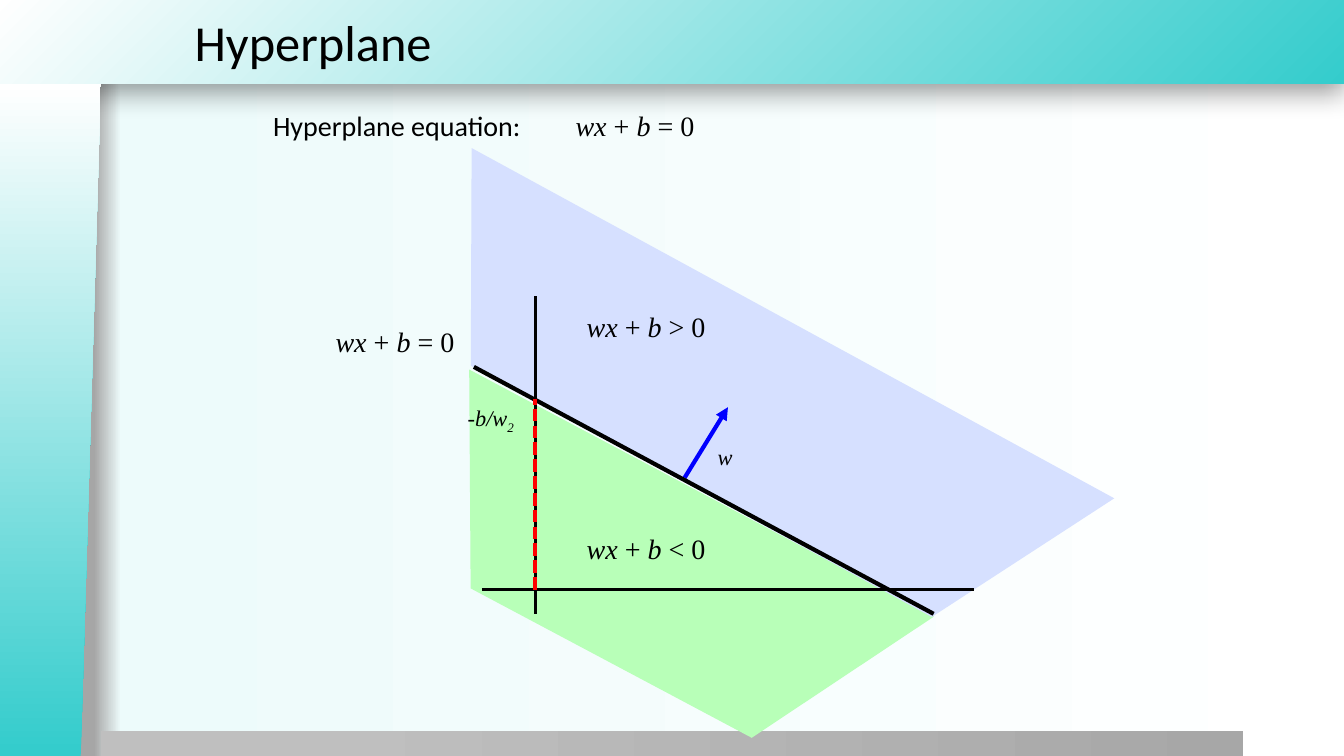
from lxml import etree
from pptx import Presentation
from pptx.dml.color import RGBColor
from pptx.enum.dml import MSO_LINE
from pptx.enum.shapes import MSO_CONNECTOR, MSO_SHAPE
from pptx.enum.text import MSO_ANCHOR, PP_ALIGN
from pptx.oxml.ns import qn
from pptx.util import Inches, Pt

RECT = MSO_SHAPE.RECTANGLE
SLANT = MSO_SHAPE.FLOWCHART_MANUAL_INPUT
TRAP = MSO_SHAPE.TRAPEZOID
STRAIGHT = MSO_CONNECTOR.STRAIGHT
DASH = MSO_LINE.SQUARE_DOT
LEFT = PP_ALIGN.LEFT
TOP, MIDDLE = MSO_ANCHOR.TOP, MSO_ANCHOR.MIDDLE
SANS, SERIF = "Calibri", "Times New Roman"
BLACK, BLUE, RED = "000000", "0000FF", "FF0000"
TEAL, WHITE = "34CCCC", "FFFFFF"


def color(code):
    """Turn a hex string into a colour."""
    return RGBColor.from_string(code)


def node(parent, tag, **attrs):
    """Add a drawing element to a parent."""
    item = etree.SubElement(parent, qn("a:" + tag))
    for key, value in attrs.items():
        item.set(key, str(value))
    return item


def blend(fill, grad, stops, focus=False):
    """Give a fill gradient stops, level or from the lower right corner."""
    fill.gradient()
    fill.gradient_angle = 0
    for old in list(grad()):
        grad().remove(old)
    steps = node(grad(), "gsLst")
    for place, code in stops:
        node(node(steps, "gs", pos=place * 1000), "srgbClr", val=code)
    if focus:
        way = node(grad(), "path", path="circle")
        node(way, "fillToRect", l=100000, t=100000)
    else:
        node(grad(), "lin", ang=0, scaled=0)


def write(frame, runs, font=SERIF, size=20, anchor=TOP):
    """Write (text, format) runs into a frame."""
    frame.word_wrap = True
    frame.vertical_anchor = anchor
    para = frame.paragraphs[0]
    para.alignment = LEFT
    for words, form in runs:
        run = para.add_run()
        run.text = words
        run.font.name = form.get("font", font)
        run.font.size = Pt(size)
        run.font.italic = form.get("slope", False)
        run.font.color.rgb = color(BLACK)
        if "base" in form:
            run.font._element.set("baseline", str(form["base"] * 1000))
    return para


def rule(sign):
    """List the runs of the plane formula with a sign."""
    slope = {"slope": True}
    return [("wx", slope), (" + ", {}), ("b", slope), (f" {sign} 0", {})]


class Board:
    """Holds the style and the current slide."""

    def __init__(self, deck):
        """Add a title-only slide with its backdrop."""
        self.slide = deck.slides.add_slide(deck.slide_layouts[5])
        self.shapes = self.slide.shapes
        fill = self.slide.background.fill
        blend(fill, lambda: next(self.slide._element.iter(qn("a:gradFill"))),
              [(7, "A6A6A6"), (9, "EDFBFB"), (100, WHITE)])

    def form(self, kind, box, fill, turn=0, flip=False, adj=None, focus=False):
        """Draw a preset shape with a plain or blended fill."""
        item = self.shapes.add_shape(kind, *map(Inches, box))
        item.shadow.inherit = False
        item.line.fill.background()
        item.rotation = turn
        if adj is not None:
            item.adjustments[0] = adj
        if flip:
            item._element.spPr.find(qn("a:xfrm")).set("flipV", "1")
        if isinstance(fill, str):
            item.fill.solid()
            item.fill.fore_color.rgb = color(fill)
        else:
            blend(item.fill, lambda: item._element.spPr.find(qn("a:gradFill")),
                  fill, focus)
        return item

    def shade(self, item):
        """Cast a soft shadow below a shape."""
        effect = item._element.spPr.find(qn("a:effectLst"))
        cast = node(effect, "outerShdw", blurRad=Pt(20), dist=Pt(6),
                    dir=5400000, algn="t", rotWithShape=0)
        node(node(cast, "srgbClr", val=BLACK), "alpha", val=40000)

    def title(self, words, box):
        """Place and format the title."""
        item = self.shapes.title
        self.shapes._spTree.append(item._element)
        item.left, item.top, item.width, item.height = map(Inches, box)
        write(item.text_frame, [(words, {})], SANS, 36, MIDDLE)

    def text(self, box, runs, **form):
        """Place a text box."""
        item = self.shapes.add_textbox(*map(Inches, box))
        return write(item.text_frame, runs, **form)

    def line(self, start, end, code=BLACK, width=3, dash=None, arrow=False):
        """Draw a straight line."""
        item = self.shapes.add_connector(STRAIGHT, *map(Inches, start + end))
        item.line.color.rgb = color(code)
        item.line.width = Pt(width)
        if dash is not None:
            item.line.dash_style = dash
        if arrow:
            node(item.line._get_or_add_ln(), "tailEnd", type="triangle")
        node(item._element.spPr, "effectLst")


def main():
    """Build the hyperplane slide."""
    deck = Presentation()
    deck.slide_width, deck.slide_height = Inches(13.33), Inches(7.5)
    board = Board(deck)

    fade = [(0, TEAL), (100, WHITE)]
    band = board.form(RECT, (-0.01, 0, 13.34, 0.83), fade, focus=True)
    board.shade(band)
    board.form(RECT, (1, 7.25, 11.33, 0.26), [(20, "BFBFBF"), (100, "A7A7A7")])
    board.form(SLANT, (-2.84, 3.67, 6.68, 1), [(1, TEAL), (100, WHITE)],
               turn=270, flip=True)
    board.form(TRAP, (3.9, 4.78, 5.22, 1.91), "B8FFB8", turn=208, adj=0.54)
    board.form(TRAP, (3.78, 3.09, 7.26, 1.9), "D6E0FF", turn=208.6, adj=0.54)

    board.title("Hyperplane", (1.83, 0, 11.5, 0.83))
    lead = ("Hyperplane equation:\t", {"font": SANS})
    para = board.text((2.61, 1.03, 8.5, 0.44), [lead] + rule("="))
    tabs = node(para._p.get_or_add_pPr(), "tabLst")
    node(tabs, "tab", pos=Inches(3), algn="l")

    root, cut = (5.31, 5.85), (5.31, 3.96)
    board.line((4.78, 5.85), (9.66, 5.85), width=0)
    board.line((5.31, 6.09), (5.31, 2.94), width=0)
    board.line((6.79, 4.74), (7.22, 4.04), BLUE, arrow=True)
    board.line((4.7, 3.64), (9.26, 6.09))
    board.line(root, cut, RED, dash=DASH)

    slope = {"slope": True}
    board.text((7.02, 4.35, 0.24, 0.37), [("w", slope)], size=16)
    board.text((4.54, 3.96, 0.79, 0.37),
               [("-b/w", slope), ("2", {"slope": True, "base": -25})], size=16)
    for left, top, sign in ((5.72, 3.02, ">"), (5.72, 5.22, "<"),
                            (3.23, 3.17, "=")):
        board.text((left, top, 1.7, 0.44), rule(sign))
    deck.save("out.pptx")


if __name__ == "__main__":
    main()
